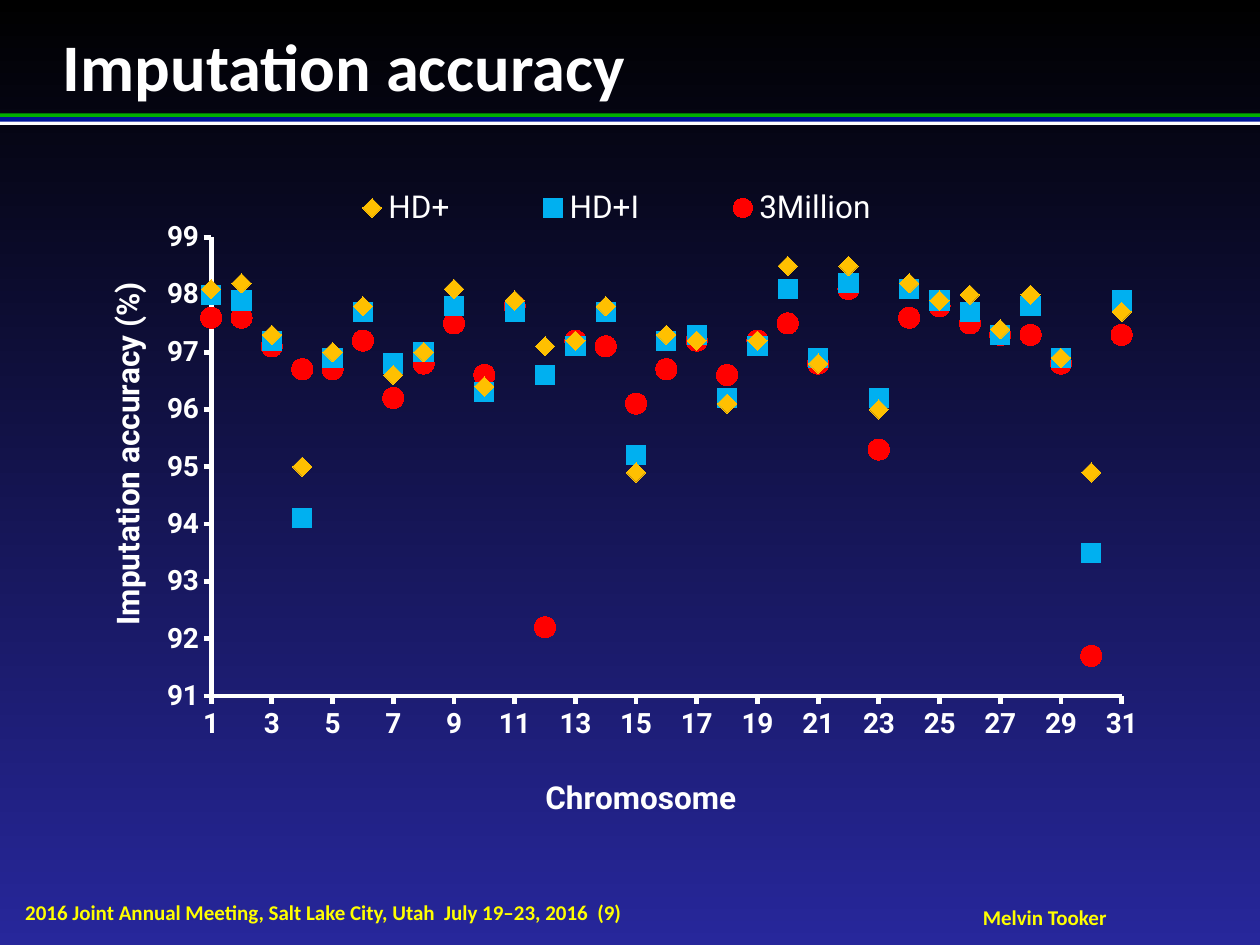
from dataclasses import dataclass

from lxml import etree
from pptx import Presentation
from pptx.chart import data
from pptx.dml.color import RGBColor
from pptx.enum import chart as ce, shapes, text
from pptx.oxml import ns
from pptx.util import Pt


@dataclass(frozen=True)
class Theme:
    top: str = "000000"
    bottom: str = "27279B"
    green: str = "01AF00"
    blue: str = "001799"
    white: str = "FFFFFF"
    yellow: str = "FFFF00"
    amber: str = "FFC000"
    sky: str = "00B0F0"
    red: str = "FF0000"
    text_font: str = "Calibri"
    chart_font: str = "Roboto"
    heading: int = 38
    footer: int = 12
    label: int = 18
    tick: int = 16


THEME = Theme()
MARK = ce.XL_MARKER_STYLE

ACCURACY = [
    ("HD+", THEME.amber, MARK.DIAMOND, 11,
     [98.1, 98.2, 97.3, 95, 97, 97.8, 96.6, 97, 98.1, 96.4, 97.9, 97.1, 97.2, 97.8, 94.9, 97.3,
      97.2, 96.1, 97.2, 98.5, 96.8, 98.5, 96, 98.2, 97.9, 98, 97.4, 98, 96.9, 94.9, 97.7]),
    ("HD+I", THEME.sky, MARK.SQUARE, 11,
     [98, 97.9, 97.2, 94.1, 96.9, 97.7, 96.8, 97, 97.8, 96.3, 97.7, 96.6, 97.1, 97.7, 95.2, 97.2,
      97.3, 96.2, 97.1, 98.1, 96.9, 98.2, 96.2, 98.1, 97.9, 97.7, 97.3, 97.8, 96.9, 93.5, 97.9]),
    ("3Million", THEME.red, MARK.CIRCLE, 12,
     [97.6, 97.6, 97.1, 96.7, 96.7, 97.2, 96.2, 96.8, 97.5, 96.6, 97.8, 92.2, 97.2, 97.1, 96.1, 96.7,
      97.2, 96.6, 97.2, 97.5, 96.8, 98.1, 95.3, 97.6, 97.8, 97.5, 97.3, 97.3, 96.8, 91.7, 97.3]),
]


def rgb(value):
    return RGBColor.from_string(value)


def style_font(font, size, color, name, bold):
    font.size, font.name, font.bold = Pt(size), name, bold
    font.color.rgb = rgb(color)


def paint_background(slide):
    fill = slide.background.fill
    fill.gradient()
    fill.gradient_angle = 270
    for stop, position, color in zip(fill.gradient_stops, (0, 1), (THEME.top, THEME.bottom)):
        stop.position = position
        stop.color.rgb = rgb(color)


def add_stripe(slide, top, height, color):
    stripe = slide.shapes.add_shape(shapes.MSO_SHAPE.RECTANGLE, 0, Pt(top), Pt(720), Pt(height))
    stripe.shadow.inherit = False
    stripe.fill.solid()
    stripe.fill.fore_color.rgb = rgb(color)
    stripe.line.fill.background()


def add_text(slide, box, words, size, color, anchor=text.MSO_ANCHOR.MIDDLE,
             align=text.PP_ALIGN.LEFT, wrap=True):
    frame = slide.shapes.add_textbox(*map(Pt, box)).text_frame
    frame.margin_left = frame.margin_right = frame.margin_top = frame.margin_bottom = 0
    frame.word_wrap = wrap
    frame.vertical_anchor = anchor
    paragraph = frame.paragraphs[0]
    paragraph.text = words
    paragraph.alignment = align
    style_font(paragraph.font, size, color, THEME.text_font, True)


def set_layout(element, inner=False, **position):
    for old in element.findall(ns.qn("c:layout")):
        element.remove(old)
    layout = etree.Element(ns.qn("c:layout"))
    manual = etree.SubElement(layout, ns.qn("c:manualLayout"))
    settings = {"layoutTarget": "inner"} if inner else {}
    settings.update(xMode="edge", yMode="edge", **position)
    for tag, value in settings.items():
        etree.SubElement(manual, ns.qn(f"c:{tag}")).set("val", str(value))
    overlay = element.find(ns.qn("c:overlay"))
    if overlay is None:
        element.insert(0, layout)
    else:
        overlay.addprevious(layout)


def style_axis(axis, title, low, high, step, left, top):
    axis.minimum_scale, axis.maximum_scale, axis.major_unit = low, high, step
    axis.has_major_gridlines = False
    axis.major_tick_mark = ce.XL_TICK_MARK.OUTSIDE
    axis.minor_tick_mark = ce.XL_TICK_MARK.NONE
    axis.tick_labels.number_format = "General"
    axis.tick_labels.number_format_is_linked = False
    style_font(axis.tick_labels.font, THEME.tick, THEME.white, THEME.chart_font, True)
    axis.format.line.width = Pt(2.75)
    axis.format.line.color.rgb = rgb(THEME.white)
    paragraph = axis.axis_title.text_frame.paragraphs[0]
    paragraph.text = title
    style_font(paragraph.font, THEME.label, THEME.white, THEME.chart_font, True)
    set_layout(axis.axis_title._element, x=left, y=top)


def style_legend(chart):
    chart.has_legend = True
    legend = chart.legend
    legend.position = ce.XL_LEGEND_POSITION.RIGHT
    legend.include_in_layout = False
    style_font(legend.font, THEME.label, THEME.white, THEME.chart_font, False)
    set_layout(legend._element, x=0.2, y=0.03, w=0.57, h=0.08)


def add_accuracy_chart(slide):
    points = data.XyChartData()
    for name, _, _, _, values in ACCURACY:
        series = points.add_series(name)
        for chromosome, value in enumerate(values, 1):
            series.add_data_point(chromosome, value)
    chart = slide.shapes.add_chart(ce.XL_CHART_TYPE.XY_SCATTER, Pt(23.8), Pt(91.4),
                                   Pt(677.5), Pt(392.4), points).chart
    chart.has_title = False
    style_font(chart.font, 10, THEME.white, THEME.chart_font, False)
    plot = chart.plots[0]
    plot.vary_by_categories = False
    for series, (_, color, symbol, size, _) in zip(plot.series, ACCURACY):
        series.format.line.fill.background()
        marker = series.marker
        marker.style, marker.size = symbol, size
        marker.format.fill.solid()
        marker.format.fill.fore_color.rgb = rgb(color)
        marker.format.line.fill.background()
    style_axis(chart.category_axis, "Chromosome", 1, 31, 2, 0.42, 0.89)
    style_axis(chart.value_axis, "Imputation accuracy (%)", 91, 99, 1, 0.05, 0.17)
    rotation = chart.value_axis.axis_title.text_frame._txBody.bodyPr
    rotation.set("rot", "-5400000")
    rotation.set("vert", "horz")
    style_legend(chart)
    plot_area = chart._chartSpace.find(".//" + ns.qn("c:plotArea"))
    set_layout(plot_area, inner=True, x=0.143, y=0.113, w=0.768, h=0.668)


def main():
    deck = Presentation()
    deck.slide_width, deck.slide_height = Pt(720), Pt(540)
    slide = deck.slides.add_slide(deck.slide_layouts[6])
    paint_background(slide)
    for top, height, color in ((64.8, 2.2, THEME.green), (69.2, 2.2, THEME.white),
                               (67, 2.6, THEME.blue)):
        add_stripe(slide, top, height, color)
    add_text(slide, (14.4, 514, 512, 14.4),
             "2016 Joint Annual Meeting, Salt Lake City, Utah  July 19–23, 2016  (9)",
             THEME.footer, THEME.yellow)
    add_text(slide, (561, 517, 72, 14.4), "Melvin Tooker", THEME.footer, THEME.yellow,
             align=text.PP_ALIGN.CENTER, wrap=False)
    add_text(slide, (36, 14.4, 648, 46), "Imputation accuracy", THEME.heading, THEME.white,
             anchor=text.MSO_ANCHOR.TOP)
    add_accuracy_chart(slide)
    deck.save("out.pptx")


if __name__ == "__main__":
    main()
